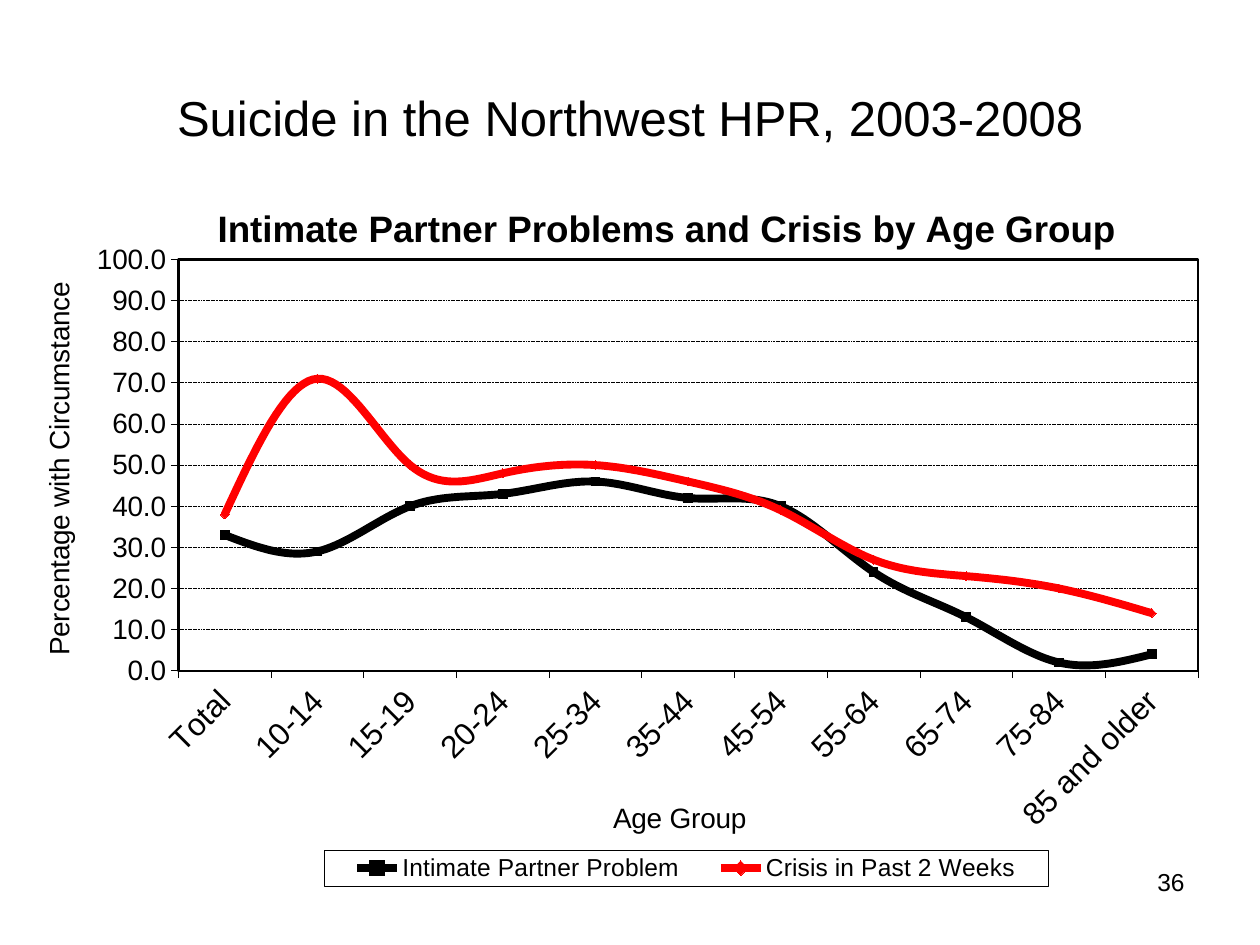
from lxml import etree
from pptx import Presentation
from pptx.chart.data import CategoryChartData
from pptx.dml.color import RGBColor
from pptx.enum.chart import XL_CHART_TYPE, XL_LEGEND_POSITION, XL_MARKER_STYLE, XL_TICK_MARK
from pptx.enum.dml import MSO_LINE
from pptx.enum.text import MSO_ANCHOR, PP_ALIGN
from pptx.oxml import parse_xml
from pptx.oxml.ns import qn
from pptx.util import Cm, Pt

BLACK = RGBColor(0x00, 0x00, 0x00)
RED = RGBColor(0xFF, 0x00, 0x00)
FONT = "Arial"
LINE_MARKERS = XL_CHART_TYPE.LINE_MARKERS
SQUARE, DIAMOND = XL_MARKER_STYLE.SQUARE, XL_MARKER_STYLE.DIAMOND
OUTSIDE = XL_TICK_MARK.OUTSIDE
BOTTOM = XL_LEGEND_POSITION.BOTTOM
SHORT_DASH = MSO_LINE.SQUARE_DOT
RIGHT, CENTER = PP_ALIGN.RIGHT, PP_ALIGN.CENTER
TOP, MIDDLE = MSO_ANCHOR.TOP, MSO_ANCHOR.MIDDLE
NAMESPACES = (
    'xmlns:c="http://schemas.openxmlformats.org/drawingml/2006/chart" '
    'xmlns:a="http://schemas.openxmlformats.org/drawingml/2006/main"'
)

SLIDE_TITLE = "Suicide in the Northwest HPR, 2003-2008"
PAGE_NUMBER = "36"
CHART_TITLE = "Intimate Partner Problems and Crisis by Age Group"
AGE_GROUPS = ["Total", "10-14", "15-19", "20-24", "25-34", "35-44",
              "45-54", "55-64", "65-74", "75-84", "85 and older"]
SERIES = [
    ("Intimate Partner Problem", [33, 29, 40, 43, 46, 42, 40, 24, 13, 2, 4], BLACK, SQUARE),
    ("Crisis in Past 2 Weeks", [38, 71, 50, 48, 50, 46, 39, 27, 23, 20, 14], RED, DIAMOND),
]


def set_font(font, size, bold=False):
    font.name, font.size, font.bold = FONT, Pt(size), bold
    font.color.rgb = BLACK


def add_text(page, text, place, size, align, anchor):
    box = page.shapes.add_textbox(*(Cm(length) for length in place))
    frame = box.text_frame
    frame.word_wrap = True
    frame.vertical_anchor = anchor
    paragraph = frame.paragraphs[0]
    paragraph.text = text
    paragraph.alignment = align
    set_font(paragraph.font, size)


def set_title(title, text, size, bold=False):
    title.text_frame.text = text
    set_font(title.text_frame.paragraphs[0].font, size, bold)


def place_part(part, after, x, y, width=None, height=None):
    """Give a chart part a manual layout, in percent of the chart area."""
    for old in part.findall(qn("c:layout")):
        part.remove(old)
    layout = etree.Element(qn("c:layout"))
    manual = etree.SubElement(layout, qn("c:manualLayout"))
    settings = [("xMode", "edge"), ("yMode", "edge"), ("x", x / 100), ("y", y / 100)]
    if width:
        settings += [("w", width / 100), ("h", height / 100)]
    if part.tag == qn("c:plotArea"):
        settings.insert(0, ("layoutTarget", "inner"))
    for name, value in settings:
        etree.SubElement(manual, qn(f"c:{name}")).set("val", str(value))
    if after:
        part.find(qn(after)).addnext(layout)
    else:
        part.insert(0, layout)


def border(points):
    return parse_xml(
        f'<c:spPr {NAMESPACES}><a:noFill/><a:ln w="{Pt(points)}"><a:solidFill>'
        f'<a:srgbClr val="{BLACK}"/></a:solidFill></a:ln></c:spPr>'
    )


def add_circumstance_chart(page):
    data = CategoryChartData(number_format="0.0")
    data.categories = AGE_GROUPS
    for name, values, _, _ in SERIES:
        data.add_series(name, values)
    chart = page.shapes.add_chart(
        LINE_MARKERS, Cm(0.53), Cm(3.38), Cm(24.33), Cm(14.68), data).chart
    set_font(chart.font, 16)
    set_title(chart.chart_title, CHART_TITLE, 21, bold=True)
    chart.plots[0].vary_by_categories = False

    for series, (_, _, color, marker) in zip(chart.plots[0].series, SERIES):
        series.smooth = True
        series.format.line.color.rgb = color
        series.format.line.width = Pt(4.5)
        series.marker.style, series.marker.size = marker, 5
        series.marker.format.fill.solid()
        series.marker.format.fill.fore_color.rgb = color
        series.marker.format.line.color.rgb = color

    ages, percent = chart.category_axis, chart.value_axis
    for axis, text, size in [(ages, "Age Group", 18), (percent, "Percentage with Circumstance", 16)]:
        set_title(axis.axis_title, text, 16)
        set_font(axis.tick_labels.font, size)
        axis.major_tick_mark = OUTSIDE
        axis.format.line.color.rgb = BLACK
        axis.format.line.width = Pt(0.38)
    ages._element.find(qn("c:txPr")).find(qn("a:bodyPr")).set("rot", "-2700000")
    percent.minimum_scale, percent.maximum_scale, percent.major_unit = 0, 100, 10
    percent.tick_labels.number_format = "0.0"
    percent.tick_labels.number_format_is_linked = False
    grid = percent.major_gridlines.format.line
    grid.color.rgb, grid.width, grid.dash_style = BLACK, Pt(0.38), SHORT_DASH

    chart.has_legend = True
    chart.legend.position = BOTTOM
    chart.legend.include_in_layout = False
    set_font(chart.legend.font, 14)

    root = chart.element.find(qn("c:chart"))
    plot_area, legend = root.find(qn("c:plotArea")), root.find(qn("c:legend"))
    place_part(root.find(qn("c:title")), "c:tx", 15.3, 4.2)
    place_part(ages._element.find(qn("c:title")), "c:tx", 48.2, 86.2)
    place_part(percent._element.find(qn("c:title")), "c:tx", 0.8, 15)
    place_part(plot_area, None, 12.6, 12.6, 84.5, 56.5)
    place_part(legend, "c:legendPos", 24.7, 93.7, 60, 5)
    plot_area.append(border(1.5))
    legend.find(qn("c:overlay")).addnext(border(0.38))


def main():
    deck = Presentation()
    deck.slide_width, deck.slide_height = Cm(25.4), Cm(19.05)
    page = deck.slides.add_slide(deck.slide_layouts[6])
    add_text(page, PAGE_NUMBER, (18.21, 17.35, 5.92, 1.32), 14, RIGHT, TOP)
    add_text(page, SLIDE_TITLE, (1.27, 0.76, 22.86, 3.18), 28, CENTER, MIDDLE)
    add_circumstance_chart(page)
    deck.save("out.pptx")


if __name__ == "__main__":
    main()
